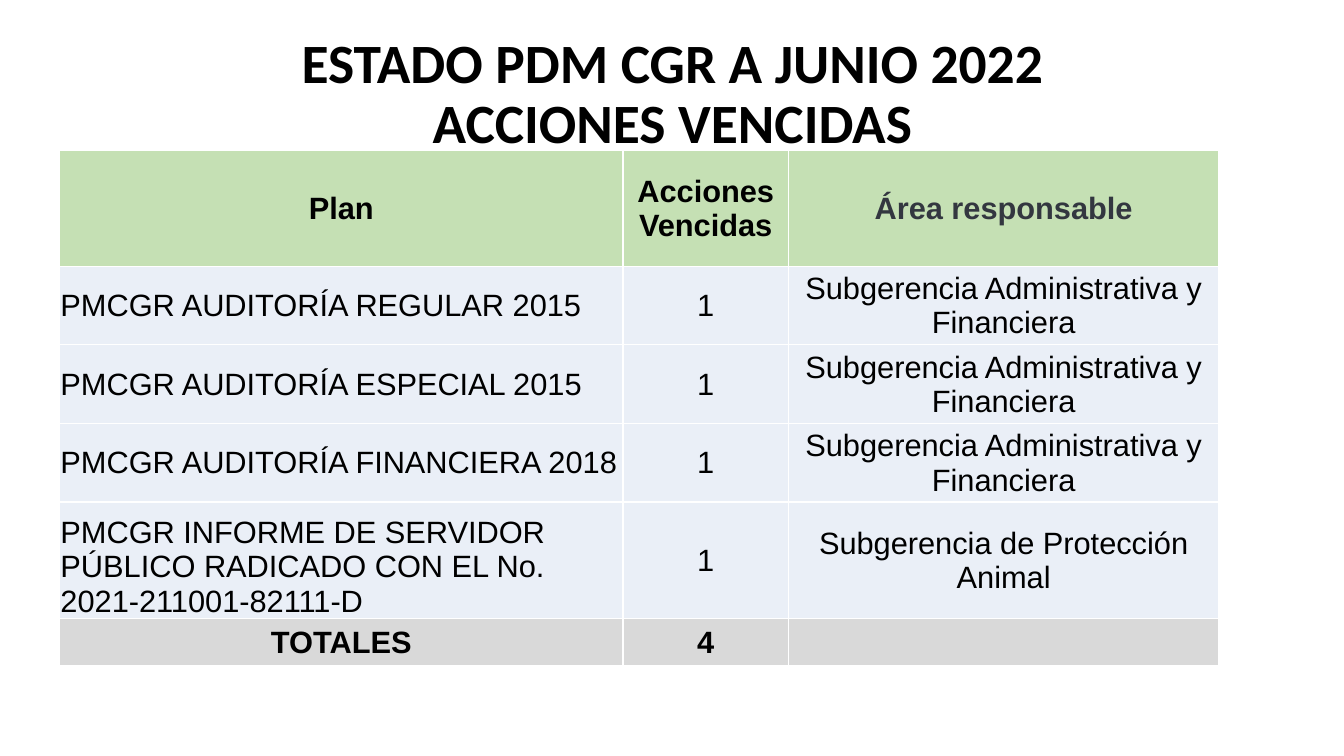
from dataclasses import dataclass

from lxml import etree
from pptx import Presentation
from pptx.dml.color import RGBColor
from pptx.enum.text import MSO_ANCHOR, PP_ALIGN
from pptx.oxml.ns import qn
from pptx.util import Inches, Pt

LEFT, CENTER = PP_ALIGN.LEFT, PP_ALIGN.CENTER
MIDDLE, BOTTOM = MSO_ANCHOR.MIDDLE, MSO_ANCHOR.BOTTOM

COLORS = {
    "text": "000000",
    "area": "333740",
    "header": "C5E0B4",
    "body": "EAEFF7",
    "total": "D9D9D9",
    "border": "FFFFFF",
}
TITLE_LINES = ("ESTADO PDM CGR A JUNIO 2022", "ACCIONES VENCIDAS")
COLUMN_WIDTHS = (5.59, 1.64, 4.27)
FINANCE_AREA = "Subgerencia Administrativa y Financiera"


@dataclass
class PlanRow:
    texts: tuple[str, str, str]
    height: float = 0.78
    fill: str = "body"
    bold: bool = False
    plan_align: PP_ALIGN = LEFT
    plan_anchor: MSO_ANCHOR = MIDDLE
    area_color: str = "text"


ROWS = (
    PlanRow(("Plan", "Acciones Vencidas", "Área responsable"), 1.15,
            "header", True, CENTER, area_color="area"),
    PlanRow(("PMCGR AUDITORÍA REGULAR 2015", "1", FINANCE_AREA)),
    PlanRow(("PMCGR AUDITORÍA ESPECIAL 2015", "1", FINANCE_AREA)),
    PlanRow(("PMCGR AUDITORÍA FINANCIERA 2018", "1", FINANCE_AREA)),
    PlanRow(("PMCGR INFORME DE SERVIDOR PÚBLICO RADICADO CON EL No. 2021-211001-82111-D",
             "1", "Subgerencia de Protección Animal"), 1.16, plan_anchor=BOTTOM),
    PlanRow(("TOTALES", "4", ""), 0.46, "total", True, CENTER),
)


def add_span(para, text: str, font: str, size: float, color: str, bold: bool) -> None:
    span = para.add_run()
    span.text = text
    span.font.name = font
    span.font.size = Pt(size)
    span.font.bold = bold
    span.font.color.rgb = RGBColor.from_string(COLORS[color])


def add_borders(cell) -> None:
    properties = cell._tc.get_or_add_tcPr()
    for index, side in enumerate(("a:lnL", "a:lnR", "a:lnT", "a:lnB")):
        line = etree.Element(qn(side), w=str(Pt(1)))
        fill = etree.SubElement(line, qn("a:solidFill"))
        etree.SubElement(fill, qn("a:srgbClr"), val=COLORS["border"])
        properties.insert(index, line)


def add_title(page) -> None:
    box = page.shapes.add_textbox(Inches(0.92), Inches(0.4), Inches(11.5), Inches(1.09))
    frame = box.text_frame
    frame.word_wrap = True
    frame.vertical_anchor = MIDDLE
    para = frame.paragraphs[0]
    para.alignment = CENTER
    para.line_spacing = 0.9
    for index, text in enumerate(TITLE_LINES):
        if index:
            para.add_line_break()
        add_span(para, text, "Calibri", 39.6, "text", True)


def fill_cell(cell, row: PlanRow, column: int) -> None:
    cell.fill.solid()
    cell.fill.fore_color.rgb = RGBColor.from_string(COLORS[row.fill])
    add_borders(cell)
    cell.margin_left = cell.margin_right = cell.margin_top = Inches(0.01)
    cell.margin_bottom = Inches(0)
    cell.vertical_anchor = row.plan_anchor if column == 0 else MIDDLE
    para = cell.text_frame.paragraphs[0]
    para.alignment = row.plan_align if column == 0 else CENTER
    if row.texts[column]:
        color = row.area_color if column == 2 else "text"
        add_span(para, row.texts[column], "Arial", 22, color, row.bold)


def add_plan_table(page) -> None:
    frame = page.shapes.add_table(
        len(ROWS), len(COLUMN_WIDTHS), Inches(0.59), Inches(1.49),
        Inches(sum(COLUMN_WIDTHS)), Inches(sum(row.height for row in ROWS)))
    table = frame.table
    for column, width in enumerate(COLUMN_WIDTHS):
        table.columns[column].width = Inches(width)
    for index, row in enumerate(ROWS):
        table.rows[index].height = Inches(row.height)
        for column in range(len(COLUMN_WIDTHS)):
            fill_cell(table.cell(index, column), row, column)


def main() -> None:
    deck = Presentation()
    deck.slide_width, deck.slide_height = Inches(13.33), Inches(7.5)
    page = deck.slides.add_slide(deck.slide_layouts[6])
    # Heading
    add_title(page)
    # Overdue actions by plan
    add_plan_table(page)
    deck.save("out.pptx")


if __name__ == "__main__":
    main()
